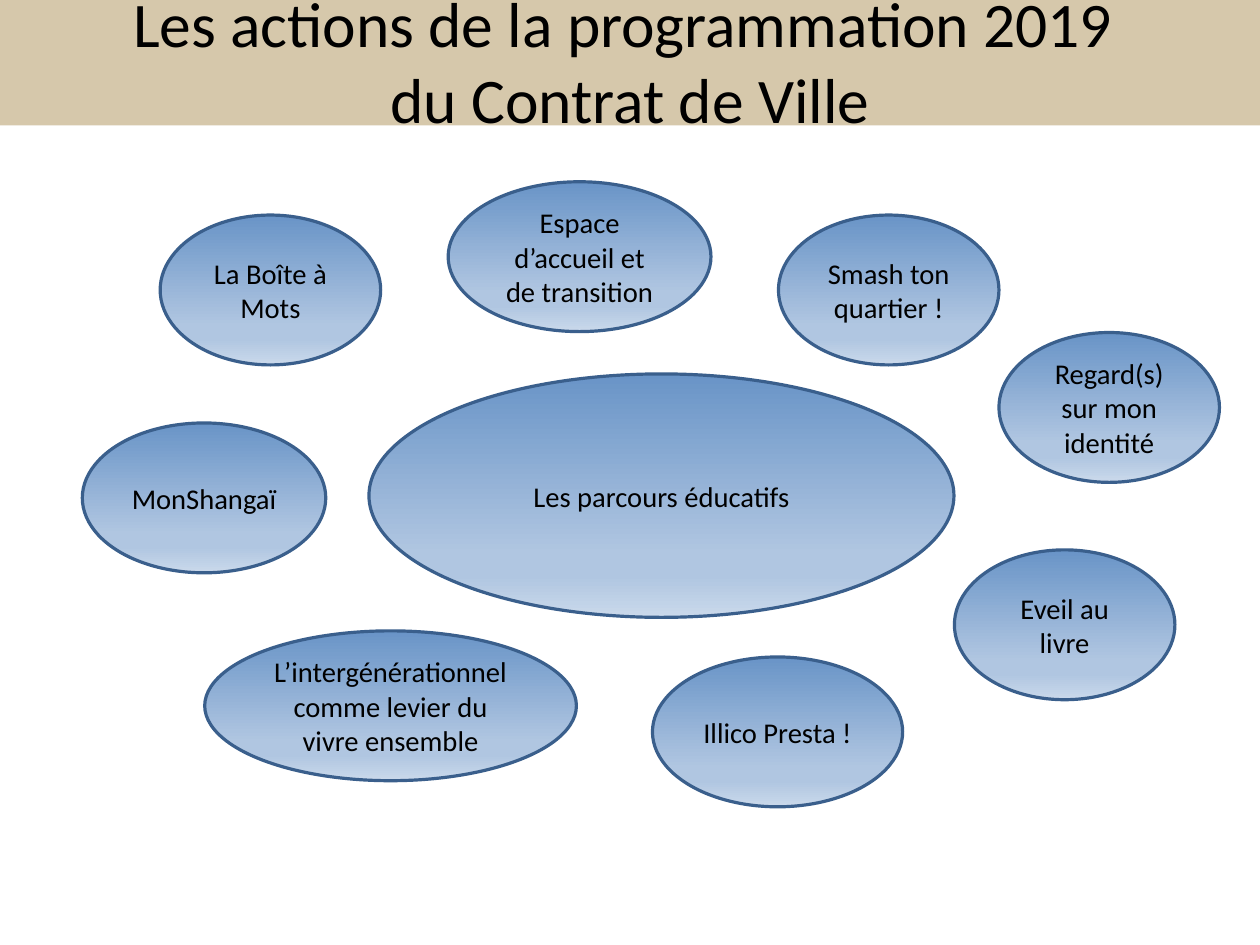
from copy import deepcopy

from pptx import Presentation
from pptx.dml.color import RGBColor
from pptx.enum.shapes import MSO_SHAPE as Shape
from pptx.enum.text import MSO_ANCHOR as Anchor, PP_ALIGN as Align
from pptx.oxml.ns import qn
from pptx.util import Cm, Pt

FONT = "Calibri"
BLACK = RGBColor(0x00, 0x00, 0x00)
SAND = RGBColor(0xD6, 0xC8, 0xAB)
OUTLINE = RGBColor(0x3A, 0x5F, 0x8C)
DEEP_BLUE = RGBColor(0x69, 0x94, 0xC7)
SOFT_BLUE = RGBColor(0xB0, 0xC6, 0xE1)
PALE_BLUE = RGBColor(0xCA, 0xD9, 0xEB)
SHADES = [(0, DEEP_BLUE), (0.74, SOFT_BLUE), (0.83, SOFT_BLUE), (1, PALE_BLUE)]

ACTION_HEIGHT = 3.33
# Text, left and top within the map, width (cm)
ACTIONS = [
    ("La Boîte à Mots", 1.76, 0.78, 4.9),
    ("MonShangaï", 0.03, 5.4, 5.41),
    ("L’intergénérationnel comme levier du vivre ensemble", 2.75, 10.02, 8.26),
    ("Espace d’accueil et de transition", 8.16, 0.04, 5.84),
    ("Illico Presta !", 12.7, 10.6, 5.56),
    ("Eveil au livre", 19.41, 8.22, 4.9),
    ("Smash ton quartier !", 15.5, 0.78, 4.9),
    ("Regard(s) sur mon identité", 20.4, 3.39, 4.9),
]


def write(holder, text, size):
    frame = holder.text_frame
    frame.word_wrap = True
    frame.vertical_anchor = Anchor.MIDDLE
    frame.text = text
    for paragraph in frame.paragraphs:
        paragraph.alignment = Align.CENTER
        for run in paragraph.runs:
            run.font.name = FONT
            run.font.size = Pt(size)
            run.font.color.rgb = BLACK


def shade(bubble):
    """Fill a bubble from deep blue at the top to pale blue at the bottom."""
    bubble.fill.gradient()
    bubble.fill.gradient_angle = 270
    stop_list = bubble._element.spPr.find(qn("a:gradFill")).find(qn("a:gsLst"))
    while len(stop_list) < len(SHADES):
        stop_list.append(deepcopy(stop_list[0]))
    for stop, (position, color) in zip(bubble.fill.gradient_stops, SHADES):
        stop.position = position
        stop.color.rgb = color


def add_bubble(slide, text, left, top, width, height):
    bubble = slide.shapes.add_shape(
        Shape.OVAL, Cm(left), Cm(top), Cm(width), Cm(height))
    bubble.shadow.inherit = False
    shade(bubble)
    bubble.line.color.rgb = OUTLINE
    bubble.line.width = Pt(2)
    write(bubble, text, 18)


def add_header(slide, left, top, width, height):
    # Sand banner
    banner = slide.shapes.add_shape(
        Shape.RECTANGLE, Cm(left), Cm(top), Cm(width), Cm(height))
    banner.shadow.inherit = False
    banner.fill.solid()
    banner.fill.fore_color.rgb = SAND
    banner.line.fill.background()
    # Title, inset on both sides
    title = slide.shapes.add_textbox(
        Cm(left + 1.5), Cm(top), Cm(width - 2.92), Cm(height - 0.1))
    write(title, "Les actions de la programmation 2019 \vdu Contrat de Ville", 40)


def add_action_map(slide, left, top):
    # Central theme
    add_bubble(slide, "Les parcours éducatifs", left + 6.4, top + 4.31, 13, 5.41)
    # Actions around it
    for text, dx, dy, width in ACTIONS:
        add_bubble(slide, text, left + dx, top + dy, width, ACTION_HEIGHT)


def main():
    deck = Presentation()
    deck.slide_width, deck.slide_height = Cm(28), Cm(21)
    slide = deck.slides.add_slide(deck.slide_layouts[6])
    add_header(slide, -0.1, 0, 28.12, 2.79)
    add_action_map(slide, 1.8, 4)
    deck.save("out.pptx")


if __name__ == "__main__":
    main()
